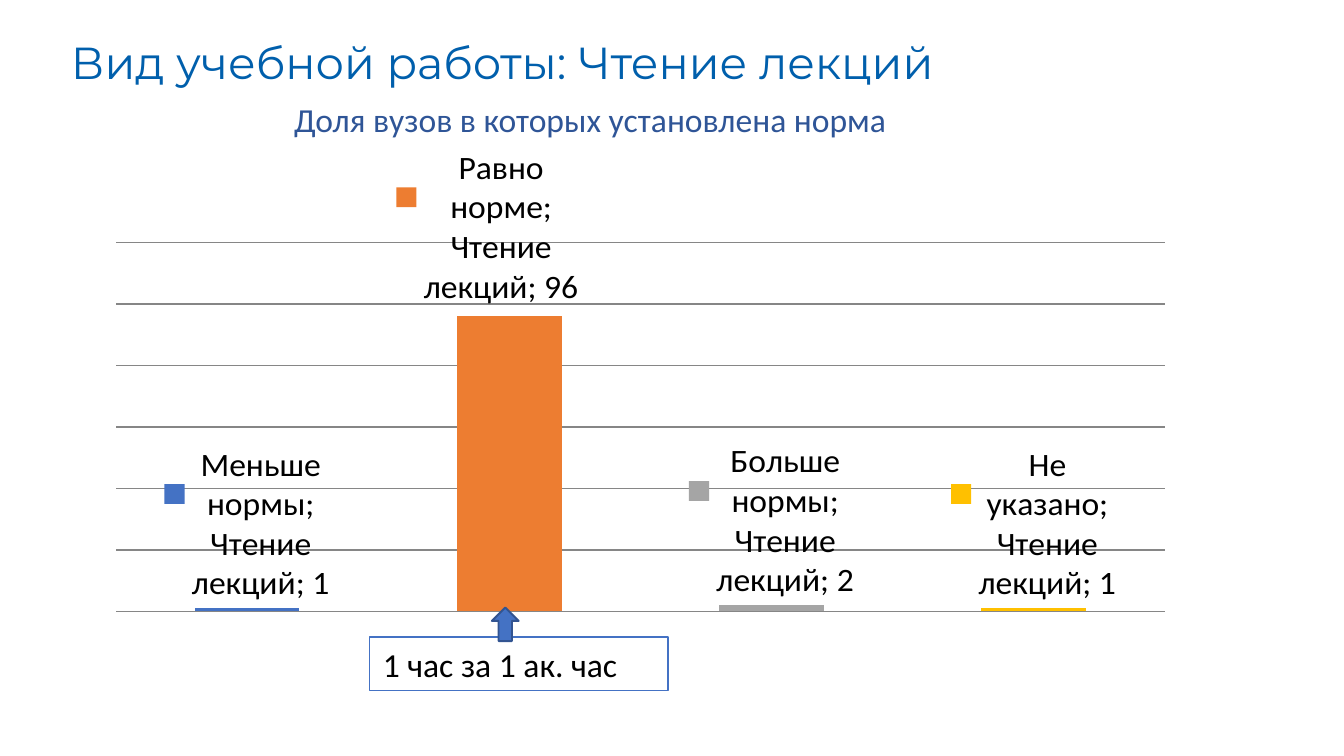
from lxml.etree import SubElement
from pptx import Presentation
from pptx.chart.data import CategoryChartData
from pptx.dml.color import RGBColor
from pptx.enum.chart import XL_CHART_TYPE, XL_LABEL_POSITION
from pptx.enum.shapes import MSO_SHAPE
from pptx.enum.text import MSO_ANCHOR
from pptx.oxml.ns import qn
from pptx.util import Inches, Pt

TITLE_BLUE = RGBColor(0x00, 0x5F, 0xAC)
SUBTITLE_BLUE = RGBColor(0x2F, 0x55, 0x97)
BLUE = RGBColor(0x44, 0x72, 0xC4)
ARROW_EDGE = RGBColor(0x32, 0x54, 0x91)
ORANGE = RGBColor(0xED, 0x7D, 0x31)
GRAY = RGBColor(0xA5, 0xA5, 0xA5)
YELLOW = RGBColor(0xFF, 0xC0, 0x00)
GRID_GRAY = RGBColor(0x86, 0x86, 0x86)
BLACK = RGBColor(0, 0, 0)

NORM_SHARES = [
    ("Меньше нормы", 1, BLUE),
    ("Равно норме", 96, ORANGE),
    ("Больше нормы", 2, GRAY),
    ("Не указано", 1, YELLOW),
]
LABEL_PARTS = ("LegendKey", "Val", "CatName", "SerName", "Percent")


def add_text(slide, box, text, color, size=18, font="Calibri"):
    shape = slide.shapes.add_textbox(*map(Inches, box))
    shape.text_frame.word_wrap = True
    run = shape.text_frame.paragraphs[0].add_run()
    run.text = text
    run.font.size = Pt(size)
    run.font.name = font
    run.font.color.rgb = color
    return shape


def add_manual_layout(parent, index, settings):
    for layout in parent.findall(qn("c:layout")):
        parent.remove(layout)
    layout = SubElement(parent, qn("c:layout"))
    parent.insert(index, layout)
    manual = SubElement(layout, qn("c:manualLayout"))
    for tag, value in settings.items():
        SubElement(manual, qn(f"c:{tag}")).set("val", str(value))


def show_label_parts(element):
    for part in LABEL_PARTS:
        element.find(qn(f"c:show{part}")).set("val", "1")
    separator = SubElement(element, qn("c:separator"))
    separator.text = "; "
    element.find(qn("c:showBubbleSize")).addnext(separator)


def label_points(series):
    labels = series.data_labels
    labels.position = XL_LABEL_POSITION.OUTSIDE_END
    show_label_parts(labels._element)

    # The label of the tall column sits a little to the left
    series.points[1].data_label.position = XL_LABEL_POSITION.OUTSIDE_END
    tall_label = labels._element.find(qn("c:dLbl"))
    show_label_parts(tall_label)
    add_manual_layout(tall_label, 1, {"x": -0.02, "y": -0.01})


def add_norm_chart(slide, box):
    data = CategoryChartData()
    data.categories = [name for name, _, _ in NORM_SHARES]
    data.add_series("Чтение лекций", [value for _, value, _ in NORM_SHARES])
    chart = slide.shapes.add_chart(
        XL_CHART_TYPE.COLUMN_CLUSTERED, *map(Inches, box), data).chart
    chart.has_legend = False
    chart.has_title = False
    chart.font.name = "Calibri"
    chart.font.size = Pt(18)
    chart.font.color.rgb = BLACK

    # Axes: only the gridlines show
    chart.category_axis.visible = False
    value_axis = chart.value_axis
    value_axis.visible = False
    value_axis.minimum_scale = 0
    value_axis.maximum_scale = 127
    value_axis.major_unit = 20
    value_axis.has_major_gridlines = True
    value_axis.major_gridlines.format.line.color.rgb = GRID_GRAY
    value_axis.major_gridlines.format.line.width = Pt(0.75)

    # Columns, one colour each
    plot = chart.plots[0]
    plot.gap_width = 150
    plot.vary_by_categories = True
    series = plot.series[0]
    for index, (_, _, color) in enumerate(NORM_SHARES):
        fill = series.points[index].format.fill
        fill.solid()
        fill.fore_color.rgb = color
    label_points(series)
    add_manual_layout(plot._element.getparent(), 0, {
        "layoutTarget": "inner", "xMode": "edge", "yMode": "edge",
        "x": 0.02, "y": 0.13, "w": 0.96, "h": 0.83})


def add_up_arrow(slide, box):
    arrow = slide.shapes.add_shape(MSO_SHAPE.UP_ARROW, *map(Inches, box))
    arrow.shadow.inherit = False
    arrow.fill.solid()
    arrow.fill.fore_color.rgb = BLUE
    arrow.line.color.rgb = ARROW_EDGE
    arrow.line.width = Pt(1)


def main():
    # Widescreen slide, 16 to 9
    presentation = Presentation()
    presentation.slide_width = Inches(10)
    presentation.slide_height = Inches(10) * 9 // 16
    slide = presentation.slides.add_slide(presentation.slide_layouts[6])

    # Title
    title = add_text(slide, (0.43, 0, 7.5, 0.71),
                     "Вид учебной работы: Чтение лекций",
                     TITLE_BLUE, 24, "Montserrat")
    title.text_frame.vertical_anchor = MSO_ANCHOR.BOTTOM
    title.text_frame.paragraphs[0].line_spacing = 0.9

    # Chart
    add_norm_chart(slide, (0.7, 1.1, 8.13, 3.59))

    # Norm callout below its column
    callout = add_text(slide, (2.75, 4.74, 2.22, 0.4),
                       "1 час за 1 ак. час", BLACK)
    callout.line.color.rgb = BLUE
    callout.line.width = Pt(0.75)
    add_up_arrow(slide, (3.66, 4.52, 0.2, 0.25))

    # Chart heading
    add_text(slide, (2.09, 0.69, 4.66, 0.4),
             "Доля вузов в которых установлена норма", SUBTITLE_BLUE)

    presentation.save("out.pptx")


if __name__ == "__main__":
    main()
